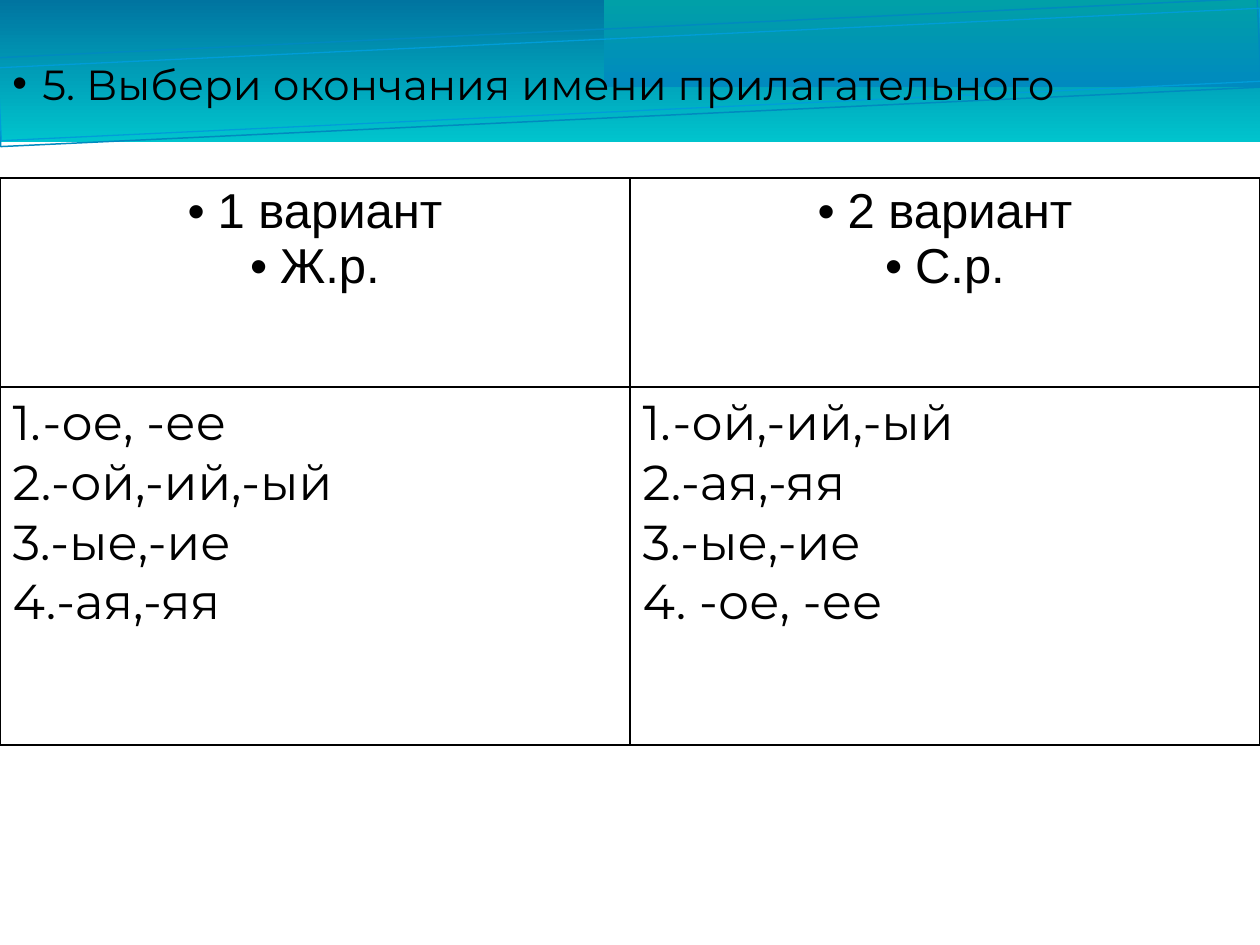
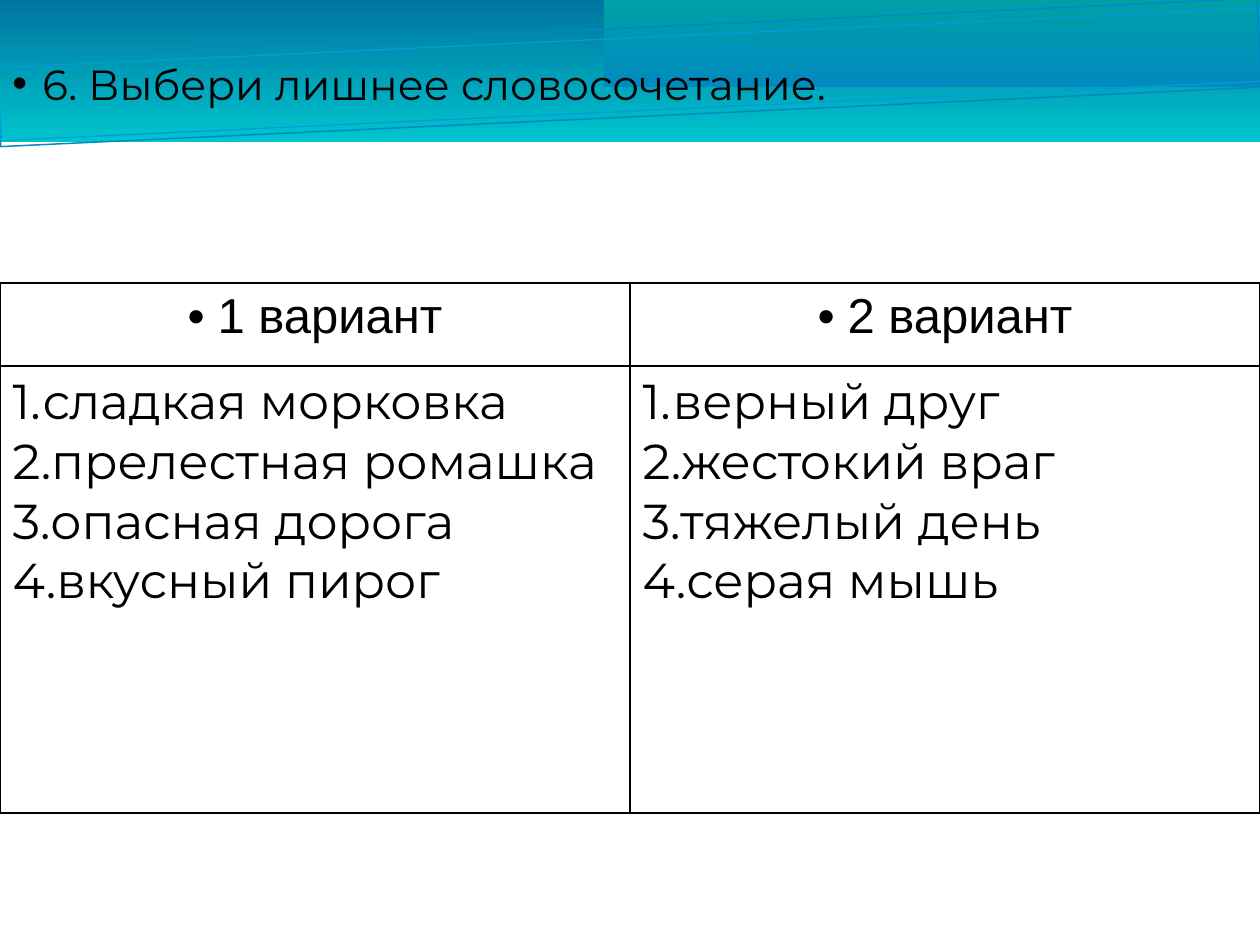
from pptx import Presentation, util as u
from pptx.dml.color import RGBColor
from pptx.enum import shapes, text
from pptx.oxml import parse_xml
from pptx.oxml.ns import nsdecls

BLACK = RGBColor(0x00, 0x00, 0x00)
NAVY = RGBColor(0x00, 0x74, 0xA0)
AQUA = RGBColor(0x00, 0xC4, 0xCD)
TEAL = RGBColor(0x00, 0xA0, 0xA8)
BLUE = RGBColor(0x00, 0x8A, 0xBF)
SKY = RGBColor(0x00, 0x9D, 0xD9)

WIDTH, HEIGHT = 1260, 945
TILT = 357.3
HANG = 30
HEAD_FONT, BODY_FONT = "Arial", "Montserrat"
TITLE_SIZE, TABLE_SIZE = 24, 28

DOT = ('<a:buFont {ns} typeface="Arial"/>', '<a:buChar {ns} char="•"/>')
NUMBER = ('<a:buFont {ns} typeface="+mj-lt"/>',
          '<a:buAutoNum {ns} type="arabicPeriod"/>')
BORDER = ('<a:{side} {ns} w="12700"><a:solidFill><a:srgbClr val="{color}"/>'
          '</a:solidFill></a:{side}>')


def px(n):
    return u.Emu(round(n * 914400 / 126))


class Deck:
    def __init__(self):
        self.prs = Presentation()
        self.prs.slide_width, self.prs.slide_height = px(WIDTH), px(HEIGHT)
        self.s = None

    def slide(self, title):
        self.s = self.prs.slides.add_slide(self.prs.slide_layouts[6])
        self.band(-1, -1, 1262, 143, NAVY, AQUA)
        self.band(604, -1, 656, 88, TEAL, BLUE)
        self.tilted_frame(-2, 28, 1262, 89, BLUE, 0.85)
        self.tilted_frame(-1, 38, 1263, 73, SKY, 0.75)
        self.title(title)

    def rect(self, x, y, w, h):
        sp = self.s.shapes.add_shape(shapes.MSO_SHAPE.RECTANGLE,
                                     px(x), px(y), px(w), px(h))
        sp.shadow.inherit = False
        return sp

    def band(self, x, y, w, h, top, bottom):
        sp = self.rect(x, y, w, h)
        sp.line.fill.background()
        sp.fill.gradient()
        sp.fill.gradient_angle = 270
        for stop, color, at in zip(sp.fill.gradient_stops, (top, bottom), (0, 1)):
            stop.color.rgb = color
            stop.position = at

    def tilted_frame(self, x, y, w, h, color, weight):
        sp = self.rect(x, y, w, h)
        sp.rotation = TILT
        sp.fill.background()
        sp.line.color.rgb = color
        sp.line.width = u.Pt(weight)

    def paragraphs(self, tf, lines, bullet, font, size, align=text.PP_ALIGN.LEFT):
        for i, line in enumerate(lines):
            p = tf.add_paragraph() if i else tf.paragraphs[0]
            p.alignment = align
            pPr = p._p.get_or_add_pPr()
            pPr.set("marL", str(px(HANG)))
            pPr.set("indent", str(px(-HANG)))
            for part in bullet:
                pPr.append(parse_xml(part.format(ns=nsdecls("a"))))
            r = p.add_run()
            r.text = line
            r.font.name, r.font.size = font, u.Pt(size)
            r.font.color.rgb = BLACK

    def title(self, line):
        tf = self.s.shapes.add_textbox(0, px(52), px(WIDTH), px(63)).text_frame
        tf.word_wrap = True
        self.paragraphs(tf, [line], DOT, BODY_FONT, TITLE_SIZE)

    def table(self, y, row_heights, heads, lists):
        """Two variants side by side: dotted headings over numbered answers."""
        table = self.s.shapes.add_table(2, 2, 0, px(y), px(WIDTH),
                                        px(sum(row_heights))).table
        table.first_row = table.horz_banding = False
        for row, height in zip(table.rows, row_heights):
            row.height = px(height)
        for col, (head, answers) in enumerate(zip(heads, lists)):
            table.columns[col].width = px(WIDTH // 2)
            self.cell(table.cell(0, col), head, DOT, HEAD_FONT,
                      text.PP_ALIGN.CENTER)
            self.cell(table.cell(1, col), answers, NUMBER, BODY_FONT,
                      text.PP_ALIGN.LEFT)

    def cell(self, cell, lines, bullet, font, align):
        tcPr = cell._tc.get_or_add_tcPr()
        for side in ("lnL", "lnR", "lnT", "lnB"):
            tcPr.append(parse_xml(BORDER.format(side=side, color=BLACK,
                                                ns=nsdecls("a"))))
        cell.fill.background()
        self.paragraphs(cell.text_frame, lines, bullet, font, TABLE_SIZE, align)


def main():
    deck = Deck()

    deck.slide("5. Выбери окончания имени прилагательного")
    deck.table(178, (209, 358),
               (["1 вариант", "Ж.р."], ["2 вариант", "С.р."]),
               (["-ое, -ее", "-ой,-ий,-ый", "-ые,-ие", "-ая,-яя"],
                ["-ой,-ий,-ый", "-ая,-яя", "-ые,-ие", " -ое, -ее"]))

    deck.slide("6. Выбери лишнее словосочетание.")
    deck.table(283, (83, 447),
               (["1 вариант"], ["2 вариант"]),
               (["сладкая морковка", "прелестная ромашка",
                 "опасная дорога", "вкусный пирог"],
                ["верный друг", "жестокий враг",
                 "тяжелый день", "серая мышь"]))

    deck.prs.save("out.pptx")


if __name__ == "__main__":
    main()
